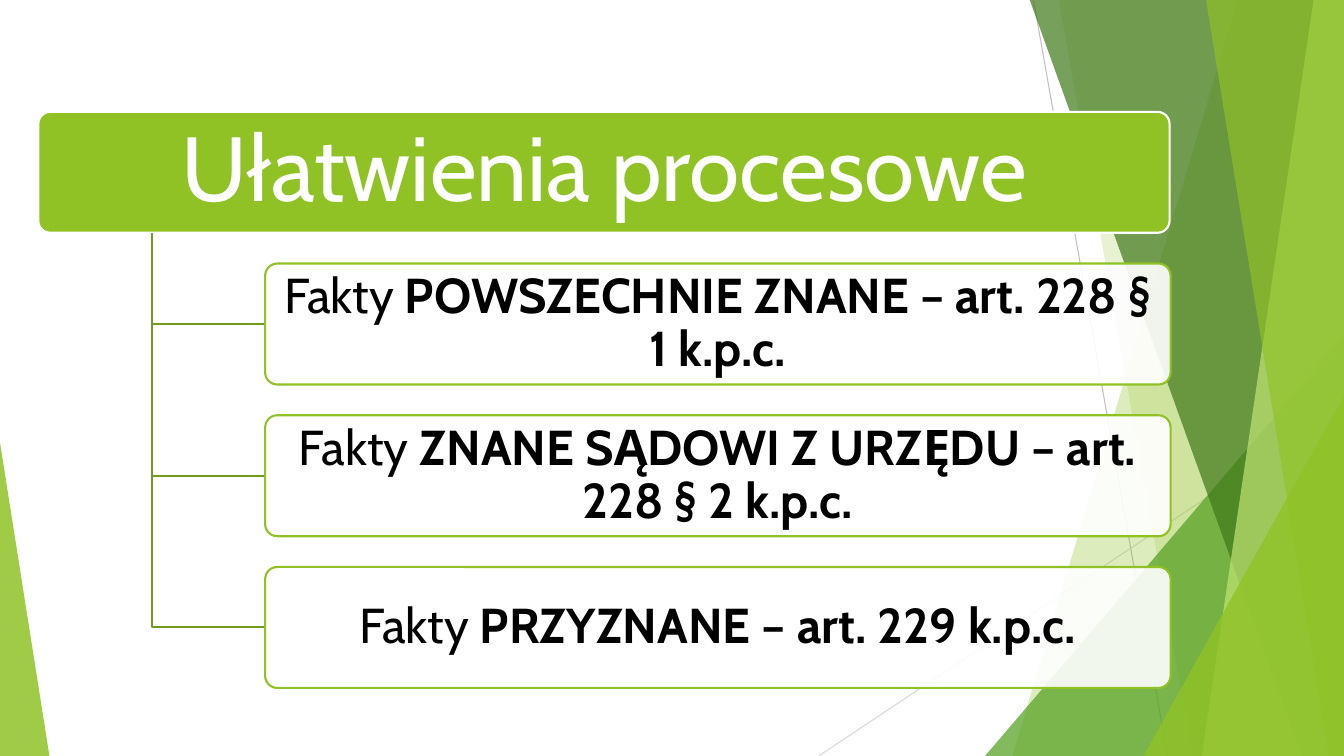
from dataclasses import dataclass

from lxml import etree
from pptx import Presentation
from pptx.dml.color import RGBColor
from pptx.enum import shapes, text
from pptx.oxml.ns import qn
from pptx.util import Inches, Pt

Point = tuple[float, float]


@dataclass(frozen=True)
class Theme:
    font: str = "Cabin"
    title_size: float = 65
    fact_size: float = 35
    line_width: float = 1.5
    hairline_width: float = 0.75
    white: str = "FFFFFF"
    black: str = "000000"
    accent: str = "90C226"
    branch: str = "739B1E"
    green: str = "54A021"
    dark_green: str = "3F7819"
    pale_green: str = "C0E474"
    gray: str = "BFBFBF"
    light_gray: str = "D9D9D9"


@dataclass(frozen=True)
class Hairline:
    start: Point
    end: Point
    color: str


@dataclass(frozen=True)
class Band:
    """A slanted strip that runs from the top to the bottom of the slide's right edge."""
    top: float
    bottom: float
    color: str
    opacity: int


@dataclass(frozen=True)
class Triangle:
    left: float
    top: float
    width: float
    apex: float
    color: str
    opacity: int


@dataclass(frozen=True)
class Box:
    left: float
    top: float
    width: float
    height: float


THEME = Theme()
WIDTH, HEIGHT = 13.33, 7.5
BANNER = Box(0.38, 1.11, 11.22, 1.2)
FACT_LEFT, FACT_WIDTH, FACT_PITCH = 2.63, 8.98, 1.505
TRUNK_X = 1.51

HAIRLINES = [
    Hairline((10.25, 0), (11.58, HEIGHT), THEME.gray),
    Hairline((WIDTH, 4.03), (8.12, HEIGHT), THEME.light_gray),
]
DECOR = [
    Band(12.28, 10.04, THEME.accent, 30),
    Band(10.5, 11.83, THEME.accent, 20),
    Triangle(9.77, 3.33, 3.56, 1, THEME.green, 72),
    Band(10.21, 12.91, THEME.dark_green, 70),
    Band(13.03, 11.92, THEME.pale_green, 70),
    Band(11.96, 13.18, THEME.accent, 65),
    Triangle(11.34, 3.93, 1.99, 1, THEME.accent, 80),
    Triangle(0, 4.39, 0.49, 0, THEME.accent, 85),
]
FACTS = [
    "POWSZECHNIE ZNANE – art. 228 § 1 k.p.c.",
    "ZNANE SĄDOWI Z URZĘDU – art. 228 § 2 k.p.c.",
    "PRZYZNANE – art. 229 k.p.c.",
]


def style(shape, fill: str | None = None, opacity: int = 100, line: str | None = None) -> None:
    shape.shadow.inherit = False
    if fill:
        shape.fill.solid()
        shape.fill.fore_color.rgb = RGBColor.from_string(fill)
        if opacity < 100:
            color = shape._element.spPr.find(qn("a:solidFill")).find(qn("a:srgbClr"))
            etree.SubElement(color, qn("a:alpha")).set("val", str(opacity * 1000))
    else:
        shape.fill.background()
    if line:
        shape.line.color.rgb = RGBColor.from_string(line)
        shape.line.width = Pt(THEME.line_width)
    else:
        shape.line.fill.background()


def write(shape, runs: list[tuple[str, bool]], *, size: float, color: str,
          inset_x: float, inset_y: float) -> None:
    """Fill a shape with one centred paragraph of (text, bold) runs."""
    frame = shape.text_frame
    frame.word_wrap = True
    frame.auto_size = text.MSO_AUTO_SIZE.NONE
    frame.vertical_anchor = text.MSO_ANCHOR.MIDDLE
    frame.margin_left = frame.margin_right = Inches(inset_x)
    frame.margin_top = frame.margin_bottom = Inches(inset_y)
    paragraph = frame.paragraphs[0]
    paragraph.alignment = text.PP_ALIGN.CENTER
    paragraph.line_spacing = 0.9
    for words, bold in runs:
        run = paragraph.add_run()
        run.text = words
        run.font.name = THEME.font
        run.font.size = Pt(size)
        run.font.bold = bold
        run.font.color.rgb = RGBColor.from_string(color)


def add_outline(slide, points: list[Point], close: bool):
    start, *others = [(Inches(x), Inches(y)) for x, y in points]
    builder = slide.shapes.build_freeform(*start)
    builder.add_line_segments(others, close=close)
    return builder.convert_to_shape()


def add_hairline(slide, hairline: Hairline) -> None:
    ends = [Inches(value) for value in hairline.start + hairline.end]
    connector = slide.shapes.add_connector(shapes.MSO_CONNECTOR.STRAIGHT, *ends)
    connector.line.color.rgb = RGBColor.from_string(hairline.color)
    connector.line.width = Pt(THEME.hairline_width)
    etree.SubElement(connector._element.spPr, qn("a:effectLst"))


def add_decor(slide, item: Band | Triangle) -> None:
    if isinstance(item, Band):
        corners = [(item.top, -0.01), (WIDTH, -0.01), (WIDTH, HEIGHT), (item.bottom, HEIGHT)]
        shape = add_outline(slide, corners, close=True)
    else:
        shape = slide.shapes.add_shape(
            shapes.MSO_SHAPE.ISOSCELES_TRIANGLE, Inches(item.left), Inches(item.top),
            Inches(item.width), Inches(HEIGHT - item.top))
        shape.adjustments[0] = item.apex
    style(shape, item.color, item.opacity)


def add_rounded(slide, box: Box):
    shape = slide.shapes.add_shape(
        shapes.MSO_SHAPE.ROUNDED_RECTANGLE, Inches(box.left), Inches(box.top),
        Inches(box.width), Inches(box.height))
    shape.adjustments[0] = 0.1
    return shape


def add_title(slide) -> None:
    """Draw the banner and lay the title placeholder on top of it."""
    banner = add_rounded(slide, BANNER)
    style(banner, THEME.accent, line=THEME.white)
    title = slide.shapes.title
    title.left, title.top = Inches(BANNER.left + 0.04), Inches(BANNER.top + 0.03)
    title.width, title.height = Inches(11.15), Inches(1.13)
    write(title, [("Ułatwienia procesowe", False)], size=THEME.title_size,
          color=THEME.white, inset_x=0.14, inset_y=0.09)
    banner._element.addnext(title._element)


def add_fact(slide, index: int, fact: str) -> None:
    box = Box(FACT_LEFT, BANNER.top + (index + 1) * FACT_PITCH, FACT_WIDTH, BANNER.height)
    middle = box.top + box.height / 2
    trunk_top = BANNER.top + BANNER.height
    branch = add_outline(
        slide, [(TRUNK_X, trunk_top), (TRUNK_X, middle), (box.left, middle)], close=False)
    style(branch, line=THEME.branch)
    shape = add_rounded(slide, box)
    style(shape, THEME.white, opacity=90, line=THEME.accent)
    write(shape, [("Fakty ", False), (fact, True)], size=THEME.fact_size,
          color=THEME.black, inset_x=0.07, inset_y=0.05)


def main() -> None:
    presentation = Presentation()
    presentation.slide_width, presentation.slide_height = Inches(WIDTH), Inches(HEIGHT)
    slide = presentation.slides.add_slide(presentation.slide_layouts[5])
    for hairline in HAIRLINES:
        add_hairline(slide, hairline)
    for item in DECOR:
        add_decor(slide, item)
    add_title(slide)
    for index, fact in enumerate(FACTS):
        add_fact(slide, index, fact)
    presentation.save("out.pptx")


if __name__ == "__main__":
    main()
